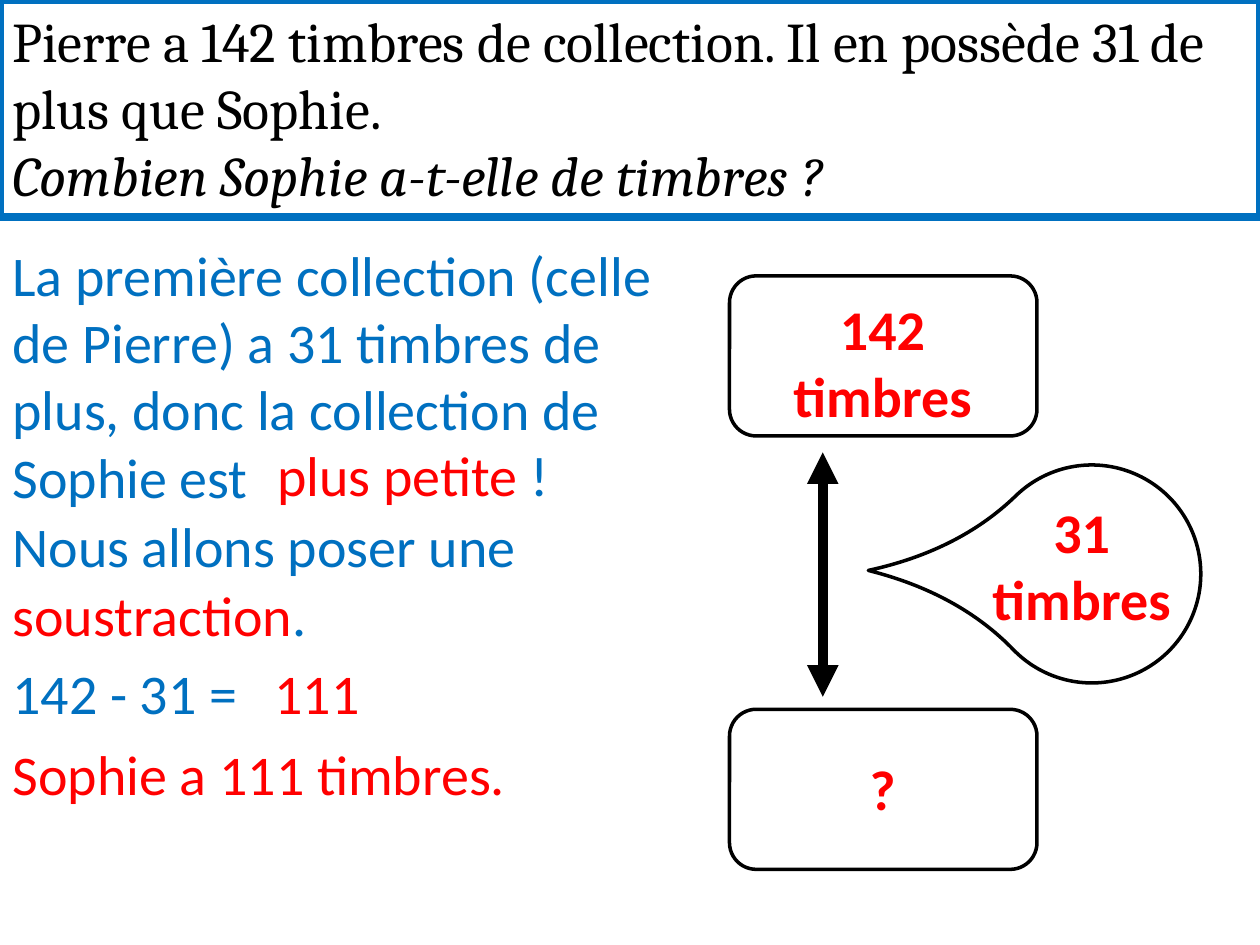
from pptx import Presentation
from pptx.dml.color import RGBColor
from pptx.enum.shapes import MSO_CONNECTOR, MSO_SHAPE
from pptx.enum.text import MSO_ANCHOR, MSO_AUTO_SIZE, PP_ALIGN
from pptx.oxml.ns import qn
from pptx.util import Inches, Pt
from lxml.etree import SubElement

THEME = {
    "blue": RGBColor(0x00, 0x70, 0xC0),
    "red": RGBColor(0xFF, 0x00, 0x00),
    "black": RGBColor(0x00, 0x00, 0x00),
    "heading_font": "Cambria",
    "body_font": "Calibri",
    "size": Pt(32),
    "frame": Pt(4.5),
    "outline": Pt(2),
    "arrow": Pt(6),
}

PROBLEM = [
    ("Pierre a 142 timbres de collection. Il en possède 31 de plus que Sophie.", False),
    ("Combien Sophie a-t-elle de timbres ?", True),
]

LINE_H = 0.64
SOLUTION = [
    ((0, 1.86, 5.79, 2.26), [("La première collection (celle de Pierre) a 31 timbres de plus, "
                              "donc la collection de Sophie est", "blue")]),
    ((2.1, 3.45, 3.69, LINE_H), [("plus petite", "red"), (" !", "blue")]),
    ((0, 4.01, 5.79, LINE_H), [("Nous allons poser une", "blue")]),
    ((0, 4.56, 5.79, LINE_H), [("soustraction", "red"), (".", "blue")]),
    ((0, 5.18, 2.28, LINE_H), [("142 - 31 =", "blue")]),
    ((2.08, 5.18, 2.28, LINE_H), [("111", "red")]),
    ((0, 5.82, 5.79, LINE_H), [("Sophie a 111 timbres.", "red")]),
]

OUTLINES = [
    (MSO_SHAPE.ROUNDED_RECTANGLE, (5.79, 2.19, 2.44, 1.27), 0, None),
    (MSO_SHAPE.ROUNDED_RECTANGLE, (5.79, 5.63, 2.44, 1.27), 0, None),
    (MSO_SHAPE.TEAR, (7.8, 3.69, 1.73, 1.73), 225.9, 1.45),
]
LABELS = [
    ((5.94, 2.29, 2.13, 1.18), "142 timbres"),
    ((5.94, 5.94, 2.13, LINE_H), "?"),
    ((7.52, 3.9, 2.13, 1.18), "31 timbres"),
]
ARROW = (6.53, 3.59, 6.53, 5.53)


def inches(values):
    return [Inches(v) for v in values]


def add_problem(s):
    sp = s.shapes.title
    sp.left, sp.top, sp.width, sp.height = inches((0, 0, 10, 1.72))
    sp.line.color.rgb = THEME["blue"]
    sp.line.width = THEME["frame"]
    tf = sp.text_frame
    tf.text = "\n".join(text for text, _ in PROBLEM)
    tf.word_wrap = True
    tf.auto_size = MSO_AUTO_SIZE.SHAPE_TO_FIT_TEXT
    tf.vertical_anchor = MSO_ANCHOR.TOP
    for p, (_, italic) in zip(tf.paragraphs, PROBLEM):
        p.alignment = PP_ALIGN.LEFT
        p.font.name = THEME["heading_font"]
        p.font.size = THEME["size"]
        p.font.color.rgb = THEME["black"]
        p.font.italic = italic


def add_text(s, box, runs, bold=False, align=PP_ALIGN.LEFT):
    tf = s.shapes.add_textbox(*inches(box)).text_frame
    tf.word_wrap = True
    tf.auto_size = MSO_AUTO_SIZE.SHAPE_TO_FIT_TEXT
    p = tf.paragraphs[0]
    p.alignment = align
    p.font.name = THEME["body_font"]
    p.font.size = THEME["size"]
    p.font.bold = bold
    for text, color in runs:
        r = p.add_run()
        r.text = text
        r.font.color.rgb = THEME[color]


def add_outline(s, kind, box, rotation, adjustment):
    sp = s.shapes.add_shape(kind, *inches(box))
    sp.shadow.inherit = False
    sp.fill.background()
    sp.line.color.rgb = THEME["black"]
    sp.line.width = THEME["outline"]
    sp.rotation = rotation
    if adjustment is not None:
        sp.adjustments[0] = adjustment


def add_arrow(s):
    cx = s.shapes.add_connector(MSO_CONNECTOR.STRAIGHT, *inches(ARROW))
    cx.line.color.rgb = THEME["black"]
    cx.line.width = THEME["arrow"]
    ln = cx.line._get_or_add_ln()
    for end in ("a:headEnd", "a:tailEnd"):
        SubElement(ln, qn(end), type="triangle")
    SubElement(cx._element.spPr, qn("a:effectLst"))


def main():
    prs = Presentation()
    prs.slide_width, prs.slide_height = Inches(10), Inches(7.5)
    s = prs.slides.add_slide(prs.slide_layouts[5])
    add_problem(s)
    for box, runs in SOLUTION:
        add_text(s, box, runs)
    for outline in OUTLINES:
        add_outline(s, *outline)
    add_arrow(s)
    for box, text in LABELS:
        add_text(s, box, [(text, "red")], bold=True, align=PP_ALIGN.CENTER)
    prs.save("out.pptx")


if __name__ == "__main__":
    main()
